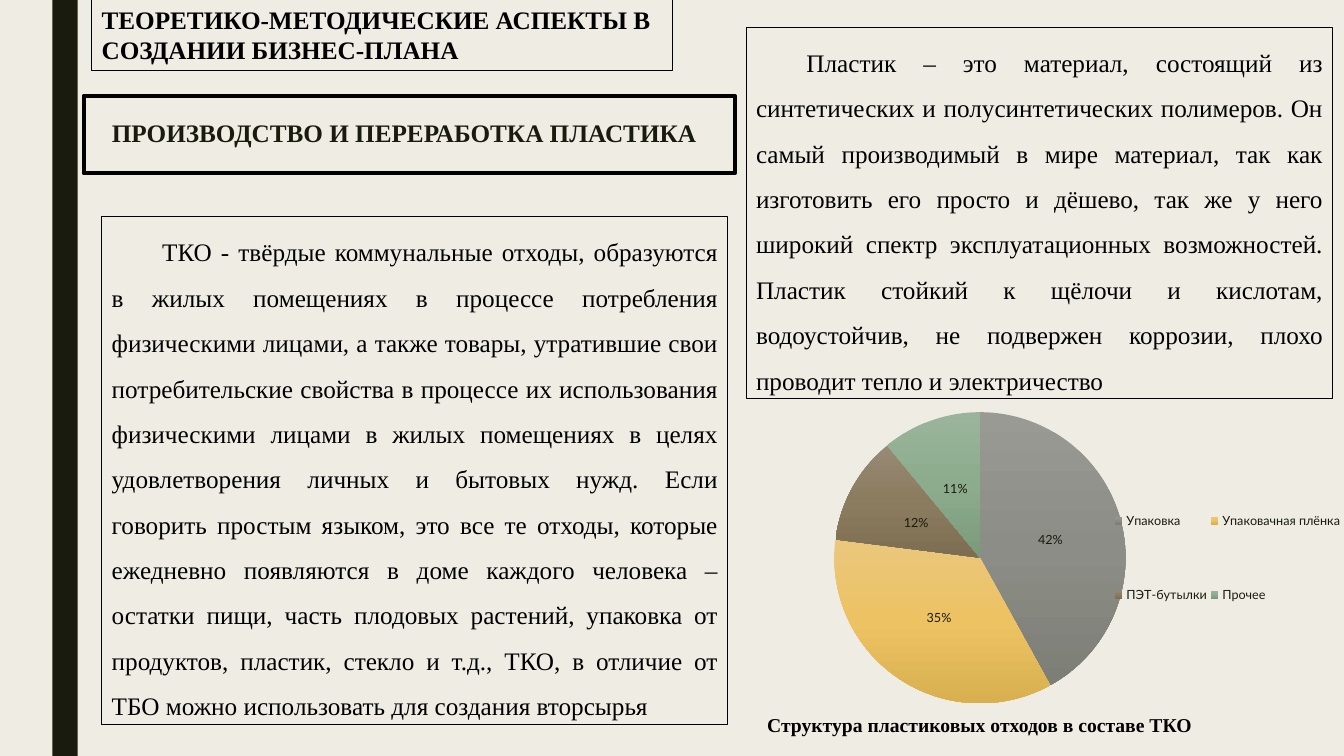
"""Build the slide about plastic waste: three text frames, a title and a pie chart."""
from copy import deepcopy
from pptx import Presentation
from pptx.chart.data import CategoryChartData
from pptx.dml.color import RGBColor
from pptx.enum import chart as ch, shapes as sh, text as tx
from pptx.oxml import parse_xml
from pptx.oxml.ns import nsdecls
from pptx.util import Inches, Pt

DARK = RGBColor(0x19, 0x1B, 0x0E)
BLACK = RGBColor(0, 0, 0)
CREAM = RGBColor(0xEF, 0xED, 0xE3)
SERIF, SANS = "Times New Roman", "Lato"

TITLE = "ПРОИЗВОДСТВО И ПЕРЕРАБОТКА ПЛАСТИКА"
HEAD = "ТЕОРЕТИКО-МЕТОДИЧЕСКИЕ АСПЕКТЫ В СОЗДАНИИ БИЗНЕС-ПЛАНА"
PLASTIC = (
    "Пластик – это материал, состоящий из синтетических и полусинтетических полимеров. "
    "Он самый производимый в мире материал, так как изготовить его просто и дёшево, "
    "так же у него широкий спектр эксплуатационных возможностей. Пластик стойкий к "
    "щёлочи и кислотам, водоустойчив, не подвержен коррозии, плохо проводит тепло и "
    "электричество")
WASTE = (
    "ТКО - твёрдые коммунальные отходы, образуются в жилых помещениях в процессе "
    "потребления физическими лицами, а также товары, утратившие свои потребительские "
    "свойства в процессе их использования физическими лицами в жилых помещениях в целях "
    "удовлетворения личных и бытовых нужд. Если говорить простым языком, это все те "
    "отходы, которые ежедневно появляются в доме каждого человека – остатки пищи, часть "
    "плодовых растений, упаковка от продуктов, пластик, стекло и т.д., ТКО, в отличие от "
    "ТБО можно использовать для создания вторсырья")
CAPTION = "Структура пластиковых отходов в составе ТКО"
SHARES = [
    ("Упаковка", 42, ("999A94", "8C8D86", "7D7E76")),
    ("Упаковачная плёнка", 35, ("EAC77D", "ECC263", "D9B050")),
    ("ПЭТ-бутылки", 12, ("978A75", "8B7C5F", "7D6E53")),
    ("Прочее", 11, ("9AB49B", "8CAC8D", "7A9B7B")),
]
PIE_AREA = (0.3, 0.04, 0.4, 0.83)
KEY_AREA = (0.68, 0.16, 0.32, 0.59)


def place(shape, box):
    shape.left, shape.top, shape.width, shape.height = map(Inches, box)


def style(font, size, color, name, bold=False):
    font.size, font.name, font.bold = Pt(size), name, bold
    font.color.rgb = color


def write(shape, words, size=18, color=BLACK, bold=True):
    frame = shape.text_frame
    frame.word_wrap = True
    frame.vertical_anchor = tx.MSO_ANCHOR.TOP
    para = frame.paragraphs[0]
    para.alignment = tx.PP_ALIGN.LEFT
    run = para.add_run()
    run.text = words
    style(run.font, size, color, SERIF, bold)
    return para


def add_box(slide, box, line=None, fill=None):
    shape = slide.shapes.add_shape(sh.MSO_SHAPE.RECTANGLE, *map(Inches, box))
    shape.shadow.inherit = False
    if fill is None:
        shape.fill.background()
    else:
        shape.fill.solid()
        shape.fill.fore_color.rgb = fill
    if line is None:
        shape.line.fill.background()
    else:
        shape.line.color.rgb = BLACK
        shape.line.width = Pt(line)
    return shape


def add_prose(slide, box, words):
    para = write(add_box(slide, box, 0.75), words, bold=False)
    para.alignment = tx.PP_ALIGN.JUSTIFY
    para.line_spacing = 1.5
    para._p.get_or_add_pPr().set("indent", str(Inches(0.5)))


def layout(area, inner=False):
    target = '<c:layoutTarget val="inner"/>' if inner else ""
    modes = "".join(f'<c:{k}Mode val="edge"/>' for k in "xy")
    sizes = "".join(f'<c:{k} val="{v}"/>' for k, v in zip("xywh", area))
    return parse_xml(f'<c:layout {nsdecls("c")}><c:manualLayout>{target}{modes}{sizes}'
                     '</c:manualLayout></c:layout>')


def shade(series, index, colors):
    fill = series.points[index].format.fill
    fill.gradient()
    fill.gradient_angle = 270
    stops = series._element.findall(".//{*}gsLst")[index]
    stops.insert(1, deepcopy(stops[0]))
    for step, (stop, color) in enumerate(zip(fill.gradient_stops, colors)):
        stop.position = step / 2
        stop.color.rgb = RGBColor.from_string(color)


def add_pie(slide, box):
    data = CategoryChartData()
    data.categories = [name for name, _, _ in SHARES]
    data.add_series("Series 1", [share for _, share, _ in SHARES])
    chart = slide.shapes.add_chart(ch.XL_CHART_TYPE.PIE, *map(Inches, box), data).chart
    style(chart.font, 10, BLACK, SANS)
    chart.has_title = False
    chart.has_legend = True
    key = chart.legend
    key.position = ch.XL_LEGEND_POSITION.BOTTOM
    key.include_in_layout = False
    style(key.font, 9, DARK, SANS)
    plot = chart.plots[0]
    plot.vary_by_categories = True
    for index, (_, _, colors) in enumerate(SHARES):
        shade(plot.series[0], index, colors)
    labels = plot.series[0].data_labels
    labels.show_percentage, labels.show_value = True, False
    labels.number_format, labels.number_format_is_linked = "0%", False
    labels.position = ch.XL_LABEL_POSITION.CENTER
    style(labels.font, 9, DARK, SANS)
    area = chart._chartSpace.find(".//{*}plotArea")
    for node, new in ((area, layout(PIE_AREA, True)), (key._element, layout(KEY_AREA))):
        for old in node.findall("{*}layout"):
            node.remove(old)
        node.insert(0 if node is area else 1, new)


def main():
    deck = Presentation()
    deck.slide_width, deck.slide_height = Inches(13.33), Inches(7.5)
    slide = deck.slides.add_slide(deck.slide_layouts[5])
    slide.background.fill.solid()
    slide.background.fill.fore_color.rgb = CREAM
    add_box(slide, (0.52, 0, 0.25, 7.5), fill=DARK)
    title = slide.shapes.title
    place(title, (1.01, 1.15, 10.5, 1.62))
    write(title, TITLE, color=DARK).line_spacing = 0.89
    add_box(slide, (0.83, 0.95, 6.46, 0.77), 2.75)
    add_prose(slide, (7.4, 0.27, 5.82, 3.68), PLASTIC)
    add_prose(slide, (1.01, 2.15, 6.21, 5.04), WASTE)
    add_pie(slide, (6.11, 3.95, 7.22, 3.48))
    note = slide.shapes.add_textbox(*map(Inches, (7.51, 7.02, 6.7, 0.34)))
    write(note, CAPTION, 14)
    write(add_box(slide, (0.91, -0.01, 5.76, 0.71), 0.75), HEAD)
    deck.save("out.pptx")


if __name__ == "__main__":
    main()
